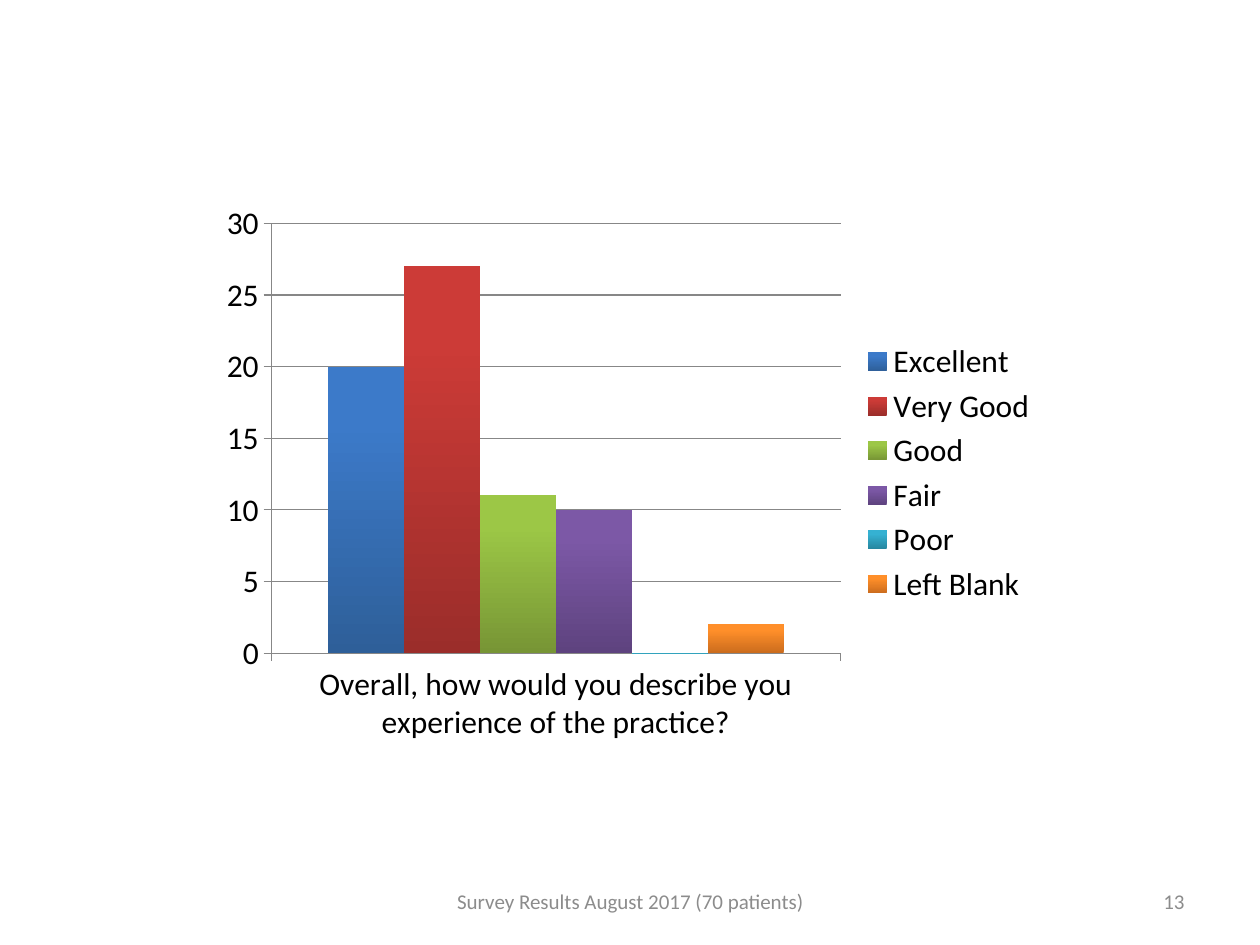
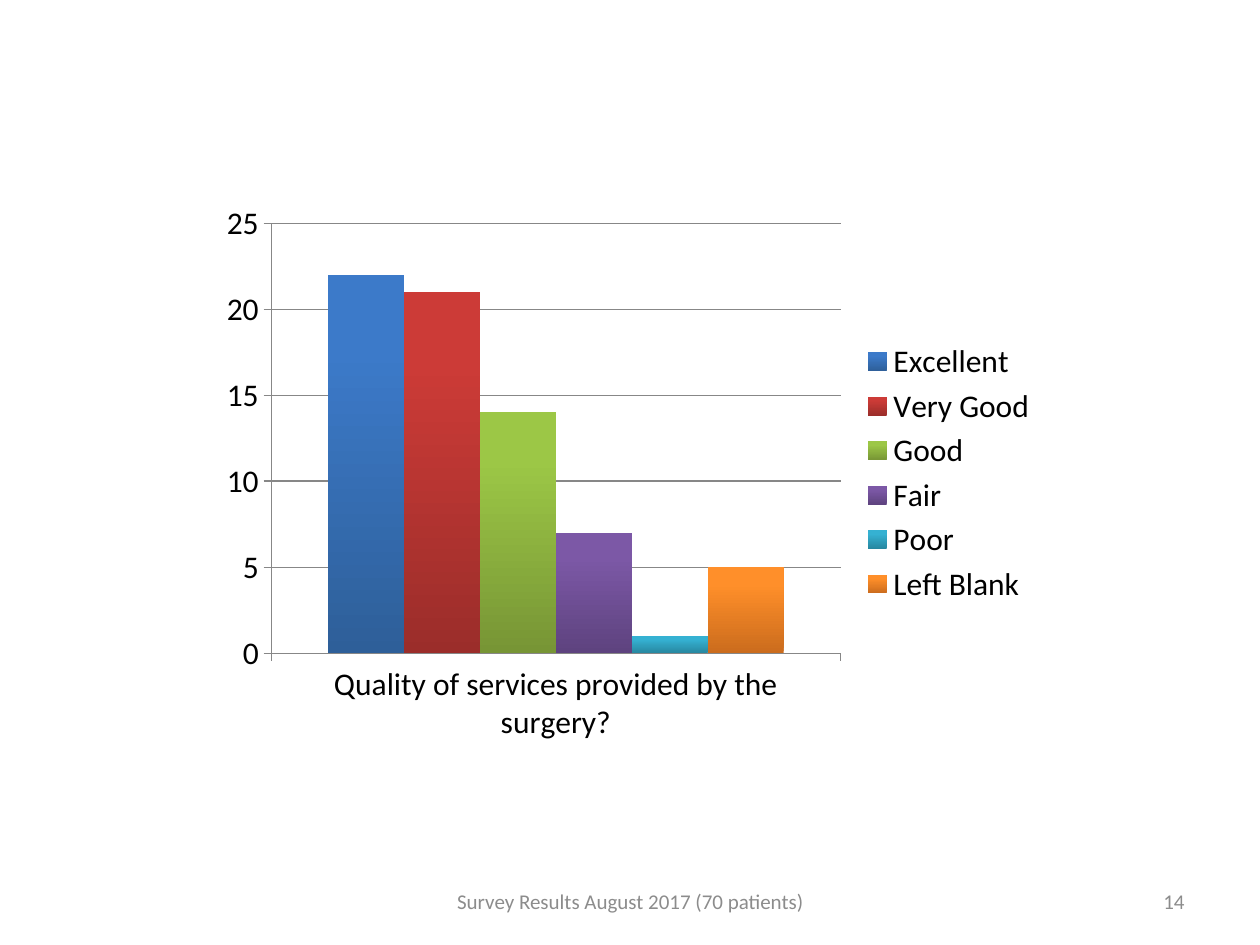
from pptx import Presentation
from pptx.chart.data import CategoryChartData
from pptx.dml.color import RGBColor
from pptx.enum.chart import XL_CHART_TYPE, XL_LEGEND_POSITION, XL_TICK_MARK
from pptx.enum.text import MSO_ANCHOR, PP_ALIGN
from pptx.util import Emu, Pt

FONT = "Calibri"
BLACK = RGBColor(0, 0, 0)
GREY = RGBColor(0x8C, 0x8C, 0x8C)
RULE = RGBColor(0x87, 0x87, 0x87)

# Each answer with the foot and top colours of its bar
ANSWERS = [
    ("Excellent", RGBColor(0x2E, 0x5F, 0x99), RGBColor(0x3C, 0x7A, 0xC9)),
    ("Very Good", RGBColor(0x9B, 0x2D, 0x2A), RGBColor(0xCC, 0x3B, 0x37)),
    ("Good", RGBColor(0x77, 0x95, 0x35), RGBColor(0x9C, 0xC7, 0x46)),
    ("Fair", RGBColor(0x5E, 0x43, 0x7F), RGBColor(0x7C, 0x58, 0xA6)),
    ("Poor", RGBColor(0x27, 0x87, 0xA0), RGBColor(0x35, 0xB1, 0xD2)),
    ("Left Blank", RGBColor(0xCB, 0x6C, 0x1D), RGBColor(0xFF, 0x8F, 0x2A)),
]

# Page number, question, votes per answer, top of the scale
SURVEY = [
    (13, "Overall, how would you describe you experience of the practice?",
     (20, 27, 11, 10, 0, 2), 30),
    (14, "Quality of services provided by the surgery?",
     (22, 21, 14, 7, 1, 5), 25),
]
FOOTER = "Survey Results August 2017 (70 patients)"

# Boxes in px: left, top, width, height
CHART_BOX = (210, 193, 840, 560)
FOOT_BOX = (431, 876, 399, 50)
PAGE_BOX = (903, 876, 294, 50)


def px(count):
    return Emu(round(count * 914400 / 126))


def add_note(slide, box, text, align):
    frame = slide.shapes.add_textbox(*map(px, box)).text_frame
    frame.word_wrap = True
    frame.vertical_anchor = MSO_ANCHOR.MIDDLE
    frame.text = text
    line = frame.paragraphs[0]
    line.alignment = align
    font = line.runs[0].font
    font.name, font.size = FONT, Pt(12)
    font.color.rgb = GREY


def shade(fill, foot, top):
    fill.gradient()
    fill.gradient_angle = 90
    for stop, tint, place in zip(fill.gradient_stops, (foot, top), (0, 0.8)):
        stop.color.rgb = tint
        stop.position = place


def draw_rule(line):
    line.color.rgb = RULE
    line.width = Pt(0.75)


def add_votes(slide, box, question, votes, limit):
    data = CategoryChartData()
    data.categories = [question]
    for (name, *_), vote in zip(ANSWERS, votes):
        data.add_series(name, [vote])
    chart = slide.shapes.add_chart(
        XL_CHART_TYPE.COLUMN_CLUSTERED, *map(px, box), data).chart
    chart.has_title = False
    chart.font.name, chart.font.size = FONT, Pt(18)
    chart.font.color.rgb = BLACK

    # Bars
    plot = chart.plots[0]
    plot.gap_width = 150
    plot.vary_by_categories = False
    for series, (_, foot, top) in zip(plot.series, ANSWERS):
        shade(series.format.fill, foot, top)

    # Axes and grid
    scale = chart.value_axis
    scale.minimum_scale, scale.maximum_scale = 0, limit
    scale.major_unit = 5
    scale.has_major_gridlines = True
    draw_rule(scale.major_gridlines.format.line)
    for axis in (scale, chart.category_axis):
        axis.major_tick_mark = XL_TICK_MARK.OUTSIDE
        draw_rule(axis.format.line)

    # Legend
    chart.has_legend = True
    chart.legend.position = XL_LEGEND_POSITION.RIGHT
    chart.legend.include_in_layout = False


def add_page(deck, number, question, votes, limit):
    slide = deck.slides.add_slide(deck.slide_layouts[6])
    add_votes(slide, CHART_BOX, question, votes, limit)
    add_note(slide, PAGE_BOX, str(number), PP_ALIGN.RIGHT)
    add_note(slide, FOOT_BOX, FOOTER, PP_ALIGN.CENTER)


def main():
    deck = Presentation()
    deck.slide_width, deck.slide_height = px(1260), px(945)
    for page in SURVEY:
        add_page(deck, *page)
    deck.save("out.pptx")


if __name__ == "__main__":
    main()
